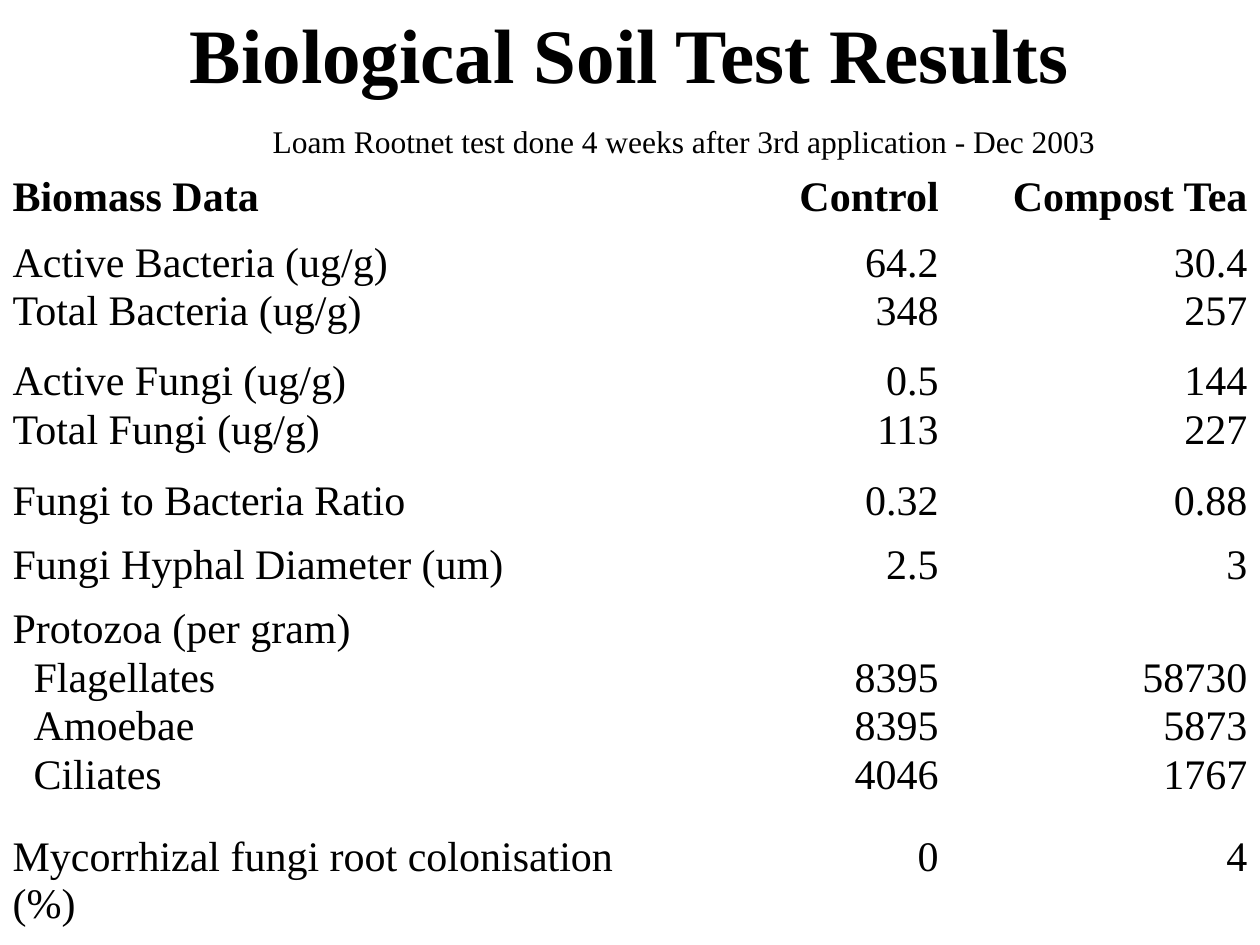
from pptx import Presentation
from pptx.dml.color import RGBColor
from pptx.enum.text import MSO_ANCHOR, MSO_AUTO_SIZE, PP_ALIGN
from pptx.oxml.ns import qn
from pptx.util import Pt
from lxml import etree

TITLE = "Biological Soil Test Results"
SUBTITLE = "Loam Rootnet test done 4 weeks after 3rd application - Dec 2003"

# (height, labels, control values, compost tea values); None leaves a line free
ROWS = [
    (37.4, ["Biomass Data"], ["Control"], ["Compost Tea"]),
    (67.7, ["Active Bacteria (ug/g)", "Total Bacteria (ug/g)"],
     ["64.2", "348"], ["30.4", "257"]),
    (68.4, ["Active Fungi (ug/g)", "Total Fungi (ug/g)"],
     ["0.5", "113"], ["144", "227"]),
    (36.7, ["Fungi to Bacteria Ratio"], ["0.32"], ["0.88"]),
    (36.7, ["Fungi Hyphal Diameter (um)"], ["2.5"], ["3"]),
    (130.3, ["Protozoa (per gram)", "Flagellates", "Amoebae", "Ciliates"],
     [None, "8395", "8395", "4046"], [None, "58730", "5873", "1767"]),
    (66.2, ["Mycorrhizal fungi root colonisation (%)"], ["0"], ["4"]),
]
INDENTED = {"Flagellates", "Amoebae", "Ciliates"}
COL_WIDTHS = [388, 155.6, 176.4]

FONT = "Times New Roman"
BLACK = RGBColor(0, 0, 0)
WHITE = RGBColor(255, 255, 255)
LEFT, CENTER, RIGHT = PP_ALIGN.LEFT, PP_ALIGN.CENTER, PP_ALIGN.RIGHT
TOP = MSO_ANCHOR.TOP
MARGIN, LINE_HEIGHT, LINE_GAP, INDENT = 3.6, 26.6, 1.2, 12
OUTER, INNER = 2.25, 1


def format_paragraph(p, text, size, align, bold=False):
    p.text = text
    p.alignment = align
    p.font.name = FONT
    p.font.size = Pt(size)
    p.font.bold = bold
    p.font.color.rgb = BLACK


def set_borders(cell, widths):
    """Draw white borders; widths maps each side's tag to points."""
    tc_pr = cell._tc.get_or_add_tcPr()
    for i, (side, width) in enumerate(widths.items()):
        ln = etree.Element(qn("a:" + side), w=str(Pt(width)))
        fill = etree.SubElement(ln, qn("a:solidFill"))
        etree.SubElement(fill, qn("a:srgbClr"), val=str(WHITE))
        tc_pr.insert(i, ln)


def fill_cell(cell, lines, align, bold):
    texts = [t for t in lines if t is not None]
    free = len(lines) - len(texts)
    cell.margin_top = Pt(MARGIN + free * (LINE_HEIGHT + LINE_GAP))
    cell.margin_bottom = Pt(MARGIN)
    cell.vertical_anchor = TOP
    cell.fill.background()
    tf = cell.text_frame
    for i, text in enumerate(texts):
        p = tf.add_paragraph() if i else tf.paragraphs[0]
        format_paragraph(p, text, 24, align, bold)
        p.space_before = Pt(LINE_GAP)
        if text in INDENTED:
            p_pr = p._p.get_or_add_pPr()
            p_pr.set("marL", str(Pt(INDENT)))
            p_pr.set("indent", "0")


def add_results(slide):
    height = sum(row[0] for row in ROWS)
    table = slide.shapes.add_table(
        len(ROWS), len(COL_WIDTHS), Pt(0), Pt(96),
        Pt(sum(COL_WIDTHS)), Pt(height)).table
    table.first_row = table.horz_banding = False
    for col, width in zip(table.columns, COL_WIDTHS):
        col.width = Pt(width)
    last_row, last_col = len(ROWS) - 1, len(COL_WIDTHS) - 1
    for r, (row_height, *columns) in enumerate(ROWS):
        table.rows[r].height = Pt(row_height)
        for c, lines in enumerate(columns):
            cell = table.cell(r, c)
            fill_cell(cell, lines, RIGHT if c else LEFT, bold=r == 0)
            set_borders(cell, {
                "lnL": OUTER if c == 0 else INNER,
                "lnR": OUTER if c == last_col else INNER,
                "lnT": OUTER if r == 0 else INNER,
                "lnB": OUTER if r == last_row else INNER,
            })


def main():
    prs = Presentation()
    prs.slide_width, prs.slide_height = Pt(720), Pt(540)
    slide = prs.slides.add_slide(prs.slide_layouts[5])

    title = slide.shapes.title
    title.left, title.top, title.width, title.height = Pt(36), Pt(0), Pt(648), Pt(90)
    tf = title.text_frame
    tf.vertical_anchor = TOP
    tf.margin_top = Pt(MARGIN)
    format_paragraph(tf.paragraphs[0], TITLE, 44, CENTER, bold=True)

    add_results(slide)

    subtitle = slide.shapes.add_textbox(Pt(147.6), Pt(66.2), Pt(486.7), Pt(28.8))
    tf = subtitle.text_frame
    tf.word_wrap = False
    tf.auto_size = MSO_AUTO_SIZE.SHAPE_TO_FIT_TEXT
    format_paragraph(tf.paragraphs[0], SUBTITLE, 18, CENTER)

    prs.save("out.pptx")


if __name__ == "__main__":
    main()
